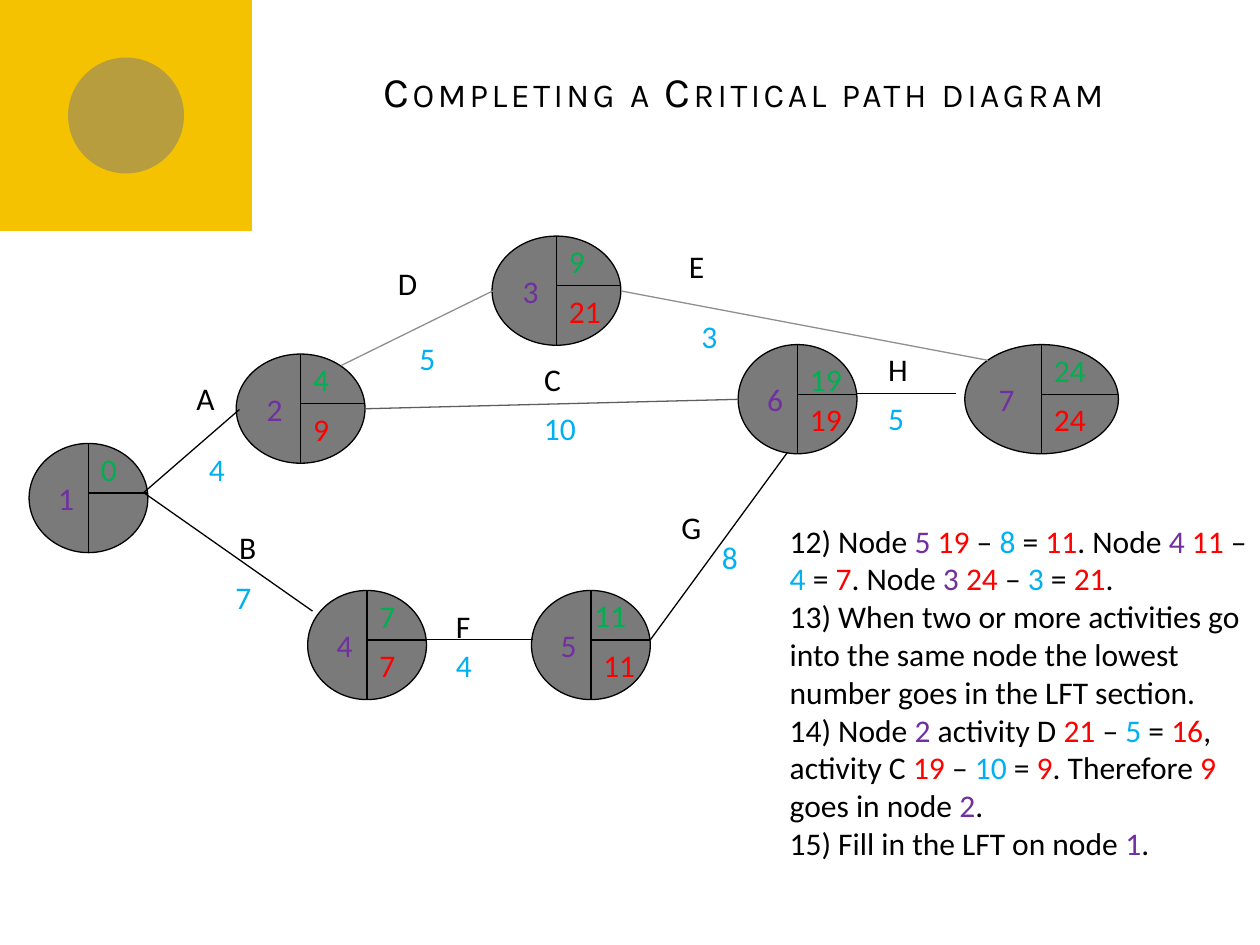
from pptx import Presentation
from pptx import util as u
from pptx.dml import color
from pptx.enum import shapes, text
from pptx.oxml import ns, xmlchemy

INK = {"k": "000000", "p": "7030A0", "g": "00B050", "r": "FF0000", "b": "00B0F0"}
GREY = "7A7A7A"

NODES = [
    ("1", "0", "", 16.6, 253.4, 67.9),
    ("2", "4", "9", 135, 202.3, 73.6),
    ("3", "9", "21", 281.2, 134.9, 73.6),
    ("7", "24", "24", 551.3, 196.9, 87.8),
    ("4", "7", "7", 175.8, 337.4, 67.9),
    ("5", "11", "11", 303.7, 337.4, 67.9),
    ("6", "19", "19", 421.8, 196.9, 67.9),
]
SHIFTS = {"5": (-5, -0.5), "6": (0, 5.5)}

TASKS = [
    ("A", 105.1, 213.1, "4", 112.3, 253.4, (82.1, 281.5, 136.8, 234), INK["k"]),
    ("B", 129.6, 298.1, "7", 127.4, 326.9, (82.1, 281.5, 178.6, 349.2), INK["k"]),
    ("C", 303.8, 202.3, "10", 303.8, 230.4, (208.8, 233.6, 421.9, 228.2), "5E5E5E"),
    ("D", 220.3, 147.6, "5", 232.6, 190.1, (195.1, 208.8, 281.5, 166.3), "8F8F8F"),
    ("E", 386.6, 137.5, "3", 393.8, 177.8, (355, 166.3, 564.5, 205.9), "8F8F8F"),
    ("F", 253.4, 343.4, "4", 253.4, 365.8, (241.9, 365.6, 304.6, 365.6), INK["k"]),
    ("G", 382.3, 286.6, "8", 405.4, 303.8, (371.5, 365.8, 450, 258.5), INK["k"]),
    ("H", 500.4, 196.6, "5", 500.4, 224.6, (489.6, 225, 546.5, 225), INK["k"]),
]

STEPS = [
    "k12) Node |p5 |r19|k – |b8|k = |r11|k. Node |p4 |r11|k – |b4|k = |r7"
    "|k. Node |p3 |r24|k – |b3|k = |r21|k.",
    "k13) When two or more activities go into the same node the lowest "
    "number goes in the LFT section.",
    "k14) Node |p2|k activity D |r21|k – |b5|k = |r16|k, activity C |r19|k – "
    "|b10|k = |r9|k. Therefore |r9|k goes in node |p2|k.",
    "k15) Fill in the LFT on node |p1|k.",
]


def rgb(code):
    return color.RGBColor.from_string(code)


def write(para, words, ink="k", size=18, face="Calibri", **marks):
    run = para.add_run()
    run.text = words
    run.font.size = u.Pt(size)
    run.font.name = face
    run.font.color.rgb = rgb(INK[ink])
    for key, val in marks.items():
        run._r.get_or_add_rPr().set(key, val)


def frame(home, x, y, wide, high=28.8):
    body = home.add_textbox(u.Pt(x), u.Pt(y), u.Pt(wide), u.Pt(high)).text_frame
    body.word_wrap = True
    return body


def label(home, words, x, y, wide, ink="k"):
    write(frame(home, x, y, wide).paragraphs[0], words, ink)


def draw(home, kind, x, y, wide, high, fill, edge=None):
    item = home.add_shape(kind, u.Pt(x), u.Pt(y), u.Pt(wide), u.Pt(high))
    item.shadow.inherit = False
    item.fill.solid()
    item.fill.fore_color.rgb = rgb(fill)
    if edge:
        item.line.color.rgb = rgb(edge)
        item.line.width = u.Pt(0.75)
    else:
        item.line.fill.background()
    return item


def link(home, ends, tint=INK["k"]):
    line = home.add_connector(shapes.MSO_CONNECTOR.STRAIGHT, *[u.Pt(n) for n in ends])
    line.line.color.rgb = rgb(tint)
    line.line.width = u.Pt(0.75)
    line._element.spPr.append(xmlchemy.OxmlElement("a:effectLst"))


def badge(slide, x, y, wide, high):
    home = slide.shapes.add_group_shape().shapes
    draw(home, shapes.MSO_SHAPE.RECTANGLE, x, y, wide, high, "F5C201")
    size = wide * 0.46
    disc = draw(home, shapes.MSO_SHAPE.OVAL, x + (wide - size) / 2,
                y + (high - size) / 2, size, size, GREY)
    alpha = xmlchemy.OxmlElement("a:alpha")
    alpha.set("val", "50000")
    disc._element.spPr.find(".//" + ns.qn("a:srgbClr")).append(alpha)


def heading(slide, x, y, wide, high):
    title = slide.shapes.title
    title.left, title.top, title.width, title.height = [u.Pt(n) for n in (x, y, wide, high)]
    body = title.text_frame
    body.vertical_anchor = text.MSO_ANCHOR.MIDDLE
    para = body.paragraphs[0]
    para.alignment = text.PP_ALIGN.RIGHT
    write(para, "Completing a Critical path diagram", size=24, face="Karla",
          cap="small", spc="200")


def node(slide, name, early, late, x, y, wide, high=62.4):
    home = slide.shapes.add_group_shape().shapes
    draw(home, shapes.MSO_SHAPE.FLOWCHART_CONNECTOR, x, y, wide, high, GREY, INK["k"])
    mid, bar = x + wide / 2, y + high * 0.455
    link(home, (mid, y, mid, y + high))
    link(home, (mid, bar, x + wide, bar))
    label(home, name, x + wide * 0.14, y + high * 0.27, wide * 0.28, "p")
    dx, dy = SHIFTS.get(name, (0, 0))
    label(home, early, mid + dx, y + dy, wide / 2, "g")
    if late:
        label(home, late, mid, bar, wide / 2, "r")


def task(slide, name, x, y, time, tx, ty, ends, tint):
    link(slide.shapes, ends, tint)
    label(slide.shapes, name, x, y, 35)
    label(slide.shapes, time, tx, ty, 45, "b")


def notes(slide, x, y, wide, high):
    body = frame(slide.shapes, x, y, wide, high)
    for spot, step in enumerate(STEPS):
        para = body.add_paragraph() if spot else body.paragraphs[0]
        for part in step.split("|"):
            write(para, part[1:], part[0])


def main():
    deck = Presentation()
    deck.slide_width, deck.slide_height = u.Pt(720), u.Pt(540)
    slide = deck.slides.add_slide(deck.slide_layouts[5])
    badge(slide, 0, 0, 144, 132)
    heading(slide, 94.3, 15.1, 612, 73.4)
    for item in NODES:
        node(slide, *item)
    for item in TASKS:
        task(slide, *item)
    notes(slide, 444.2, 294.5, 282.2, 203.8)
    deck.save("out.pptx")


if __name__ == "__main__":
    main()
